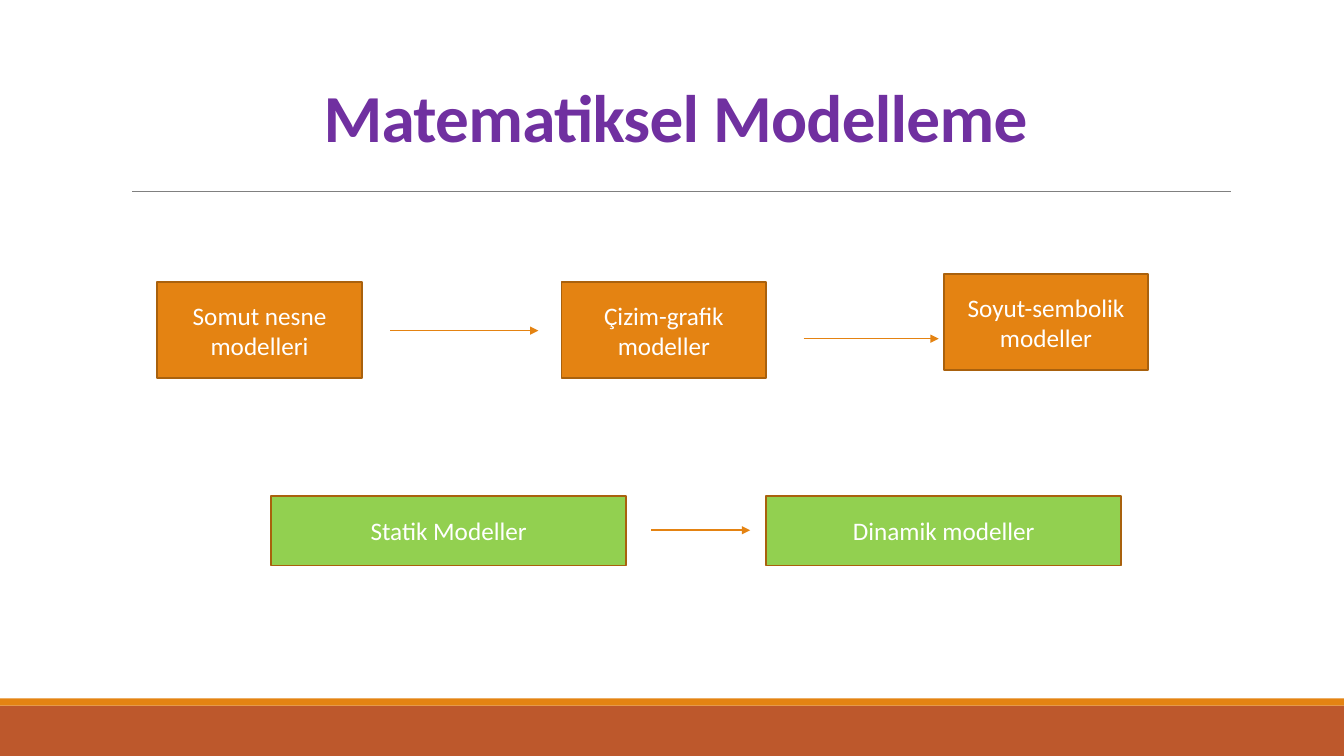
from lxml import etree
from pptx import Presentation
from pptx.dml.color import RGBColor
from pptx.enum.shapes import MSO_CONNECTOR, MSO_SHAPE
from pptx.enum.text import MSO_ANCHOR, MSO_AUTO_SIZE, PP_ALIGN
from pptx.oxml.ns import qn
from pptx.util import Inches, Pt

RECTANGLE = MSO_SHAPE.RECTANGLE
STRAIGHT = MSO_CONNECTOR.STRAIGHT
CENTER = PP_ALIGN.CENTER
MIDDLE = MSO_ANCHOR.MIDDLE
BOTTOM = MSO_ANCHOR.BOTTOM
NO_AUTOFIT = MSO_AUTO_SIZE.NONE

WHITE = RGBColor(0xFF, 0xFF, 0xFF)
ORANGE = RGBColor(0xE4, 0x83, 0x12)
DARK_ORANGE = RGBColor(0xA9, 0x61, 0x0D)
RUST = RGBColor(0xBD, 0x58, 0x2C)
GREEN = RGBColor(0x92, 0xD0, 0x50)
GRAY = RGBColor(0x80, 0x80, 0x80)
PURPLE = RGBColor(0x70, 0x30, 0xA0)

FONT = "Calibri"
TITLE_ONLY = 5
PAGE_WIDTH = 13.33
PAGE_HEIGHT = 7.5

MODEL_SIZE = (2.03, 0.95)
MODELS = [
    ("Somut nesne modelleri", 1.56, 2.8),
    ("Çizim-grafik modeller", 5.57, 2.8),
    ("Soyut-sembolik modeller", 9.36, 2.72),
]
KIND_SIZE = (3.52, 0.69)
KINDS = [
    ("Statik Modeller", 2.69, 4.92),
    ("Dinamik modeller", 7.6, 4.92),
]
ARROWS = [(3.87, 5.34, 3.28), (7.97, 9.31, 3.36), (6.46, 7.44, 5.26)]


def write_text(frame, text, size, color, anchor):
    frame.word_wrap = True
    frame.vertical_anchor = anchor
    para = frame.paragraphs[0]
    para.alignment = CENTER
    span = para.add_run()
    span.text = text
    span.font.name = FONT
    span.font.size = Pt(size)
    span.font.color.rgb = color
    return para, span


def add_title(page, text):
    title = page.shapes.title
    title.left, title.top = Inches(1.2), Inches(0.31)
    title.width, title.height = Inches(11), Inches(1.29)
    title.text_frame.auto_size = NO_AUTOFIT
    para, span = write_text(title.text_frame, text, 48, PURPLE, BOTTOM)
    para.line_spacing = 0.85
    span.font.bold = True
    span.font._element.set("spc", "-50")


def add_rectangle(page, left, top, width, height, fill):
    box = page.shapes.add_shape(
        RECTANGLE, Inches(left), Inches(top), Inches(width), Inches(height)
    )
    box.shadow.inherit = False
    box.fill.solid()
    box.fill.fore_color.rgb = fill
    box.line.fill.background()
    return box


def add_label_box(page, text, left, top, size, fill):
    box = add_rectangle(page, left, top, *size, fill)
    box.line.color.rgb = DARK_ORANGE
    box.line.width = Pt(1.25)
    write_text(box.text_frame, text, 18, WHITE, MIDDLE)


def add_line(page, start, end, height, color, weight):
    line = page.shapes.add_connector(
        STRAIGHT, Inches(start), Inches(height), Inches(end), Inches(height)
    )
    line.line.color.rgb = color
    line.line.width = Pt(weight)
    etree.SubElement(line._element.spPr, qn("a:effectLst"))
    return line


def add_arrow(page, start, end, height):
    arrow = add_line(page, start, end, height, ORANGE, 1)
    outline = arrow.line._get_or_add_ln()
    etree.SubElement(outline, qn("a:tailEnd"), type="triangle")


def main():
    deck = Presentation()
    deck.slide_width = Inches(PAGE_WIDTH)
    deck.slide_height = Inches(PAGE_HEIGHT)
    page = deck.slides.add_slide(deck.slide_layouts[TITLE_ONLY])

    add_rectangle(page, 0, 7, PAGE_WIDTH, 0.5, RUST)
    add_rectangle(page, 0, 6.93, PAGE_WIDTH, 0.07, ORANGE)
    add_line(page, 1.31, 12.21, 1.9, GRAY, 0.5)
    add_title(page, "Matematiksel Modelleme")
    for text, left, top in MODELS:
        add_label_box(page, text, left, top, MODEL_SIZE, ORANGE)
    for text, left, top in KINDS:
        add_label_box(page, text, left, top, KIND_SIZE, GREEN)
    for start, end, height in ARROWS:
        add_arrow(page, start, end, height)

    deck.save("out.pptx")


main()
